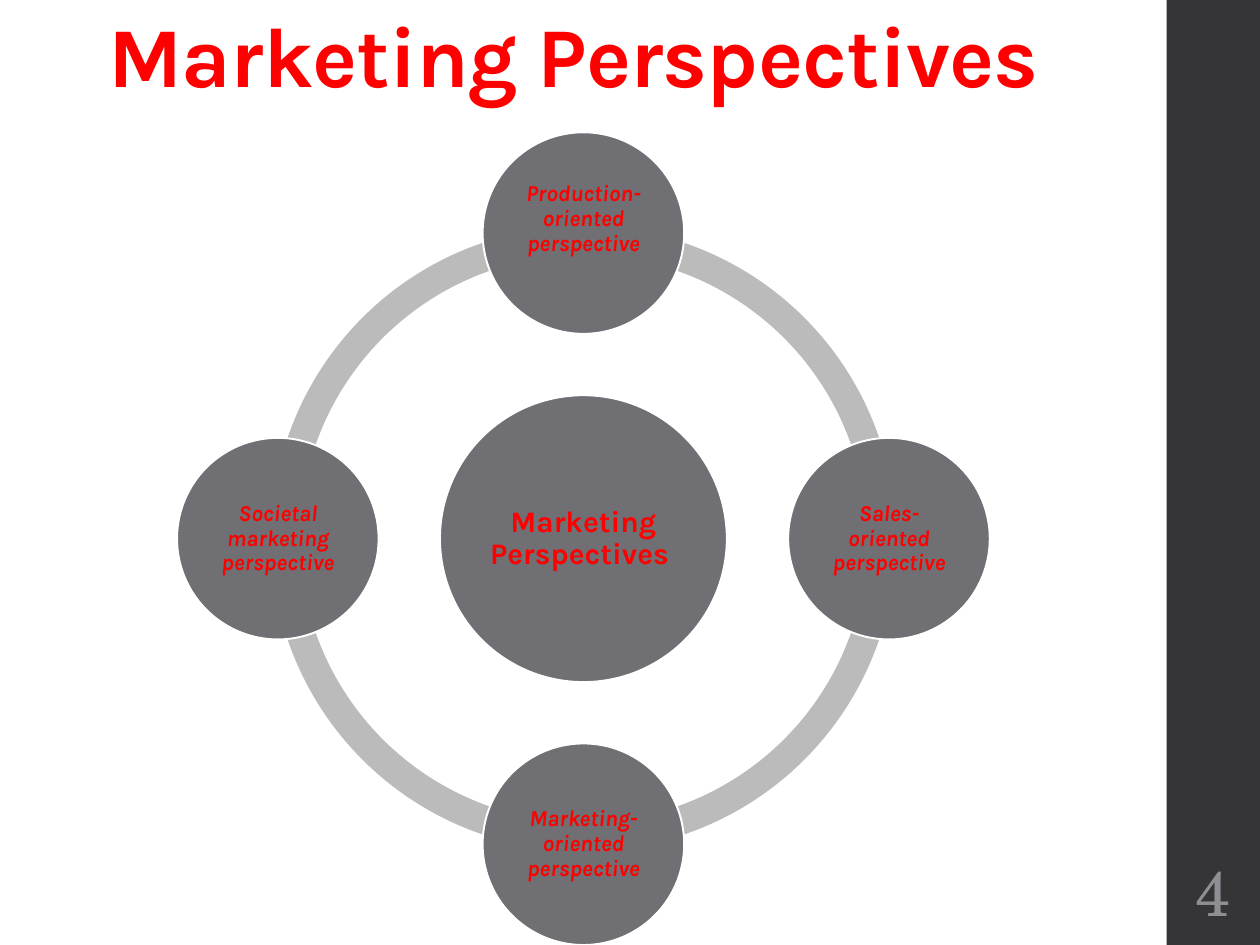
from math import cos, pi, sin

from pptx import Presentation
from pptx.dml.color import RGBColor
from pptx.enum.shapes import MSO_SHAPE
from pptx.enum.text import MSO_ANCHOR, MSO_AUTO_SIZE, PP_ALIGN
from pptx.util import Inches, Pt

ARC = MSO_SHAPE.BLOCK_ARC
OVAL = MSO_SHAPE.OVAL
RECT = MSO_SHAPE.RECTANGLE
MIDDLE = MSO_ANCHOR.MIDDLE
BOTTOM = MSO_ANCHOR.BOTTOM
CENTER = PP_ALIGN.CENTER
FIXED = MSO_AUTO_SIZE.NONE

RED = RGBColor(0xFF, 0x00, 0x00)
WHITE = RGBColor(0xFF, 0xFF, 0xFF)
DARK = RGBColor(0x35, 0x35, 0x37)
GRAY = RGBColor(0x6F, 0x6F, 0x74)
PALE = RGBColor(0xBB, 0xBB, 0xBC)
SILVER = RGBColor(0x8E, 0x8E, 0x94)

SANS = "Karla"
SERIF = "TeX Gyre Schola"
WIDE, HIGH = Inches(10), Inches(7.5)
MAIN = 0.926
NODES = [
    ("Production-oriented perspective", 0.24),
    ("Sales-oriented perspective", 0.02),
    ("Marketing-oriented perspective", 0.02),
    ("Societal marketing perspective", 0.02),
]


def add_shape(shapes, kind, box, fill, line=None):
    shape = shapes.add_shape(kind, *(round(v) for v in box))
    shape.shadow.inherit = False
    shape.fill.solid()
    shape.fill.fore_color.rgb = fill
    if line is None:
        shape.line.fill.background()
    else:
        shape.line.color.rgb = line
        shape.line.width = Pt(1.1)
    return shape


def write(shape, text, size, face, color, bold=False, italic=None,
          anchor=MIDDLE, space=0.9):
    frame = shape.text_frame
    frame.word_wrap = True
    frame.auto_size = FIXED
    frame.vertical_anchor = anchor
    para = frame.paragraphs[0]
    para.alignment = CENTER
    para.line_spacing = space
    run = para.add_run()
    run.text = text
    font = run.font
    font.size, font.name = Pt(size), face
    font.bold, font.italic = bold, italic
    font.color.rgb = color
    return run


def inset(shape, gap, base):
    frame = shape.text_frame
    frame.margin_left = frame.margin_right = frame.margin_top = Inches(gap)
    frame.margin_bottom = Inches(base)


def add_title(slide, box):
    title = slide.shapes.title
    title.left, title.top, title.width, title.height = map(round, box)
    run = write(title, "Marketing Perspectives ", 48.6, SANS, RED, True,
                anchor=BOTTOM)
    run._r.get_or_add_rPr().set("spc", "-50")


def add_side(slide, box):
    left, top, width, height = box
    add_shape(slide.shapes, RECT, box, DARK)
    spot = (left, top + 0.9 * height, width, 0.087 * height)
    label = slide.shapes.add_textbox(*map(round, spot))
    inset(label, 0.05, 0.05)
    write(label, "4", 36, SERIF, SILVER, space=1.0)


def add_disc(shapes, x, y, size, text, points, base=0.02, italic=None):
    box = (x - size / 2, y - size / 2, size, size)
    disc = add_shape(shapes, OVAL, box, GRAY, WHITE)
    inset(disc, 0.02, base)
    write(disc, text, points, SANS, RED, True, italic)


def add_cycle(slide, box):
    left, top, side, _ = box
    x, y = left + side / 2, top + side / 2
    ring, hub, node = 0.769 * side, 0.353 * side, 0.248 * side
    orbit = (side - node) / 2
    shapes = slide.shapes.add_group_shape().shapes

    for start in (108, 54, 0, 162):
        arc = add_shape(shapes, ARC,
                        (x - ring / 2, y - ring / 2, ring, ring), PALE)
        arc.adjustments[0] = start
        arc.adjustments[1] = (start + 54) % 216
        arc.adjustments[2] = 0.046

    add_disc(shapes, x, y, hub, "Marketing Perspectives ", 17)
    for step, (text, base) in enumerate(NODES):
        turn = 2 * pi * step / len(NODES) - pi / 2
        add_disc(shapes, x + orbit * cos(turn), y + orbit * sin(turn),
                 node, text, 13, base, True)


def main():
    deck = Presentation()
    deck.slide_width, deck.slide_height = WIDE, HIGH
    slide = deck.slides.add_slide(deck.slide_layouts[5])
    add_side(slide, (MAIN * WIDE, 0, (1 - MAIN) * WIDE, HIGH))
    add_title(slide, (0, 0, MAIN * WIDE, 0.119 * HIGH))
    side = 0.86 * HIGH
    add_cycle(slide, ((MAIN * WIDE - side) / 2, HIGH - side, side, side))
    deck.save("out.pptx")


if __name__ == "__main__":
    main()
